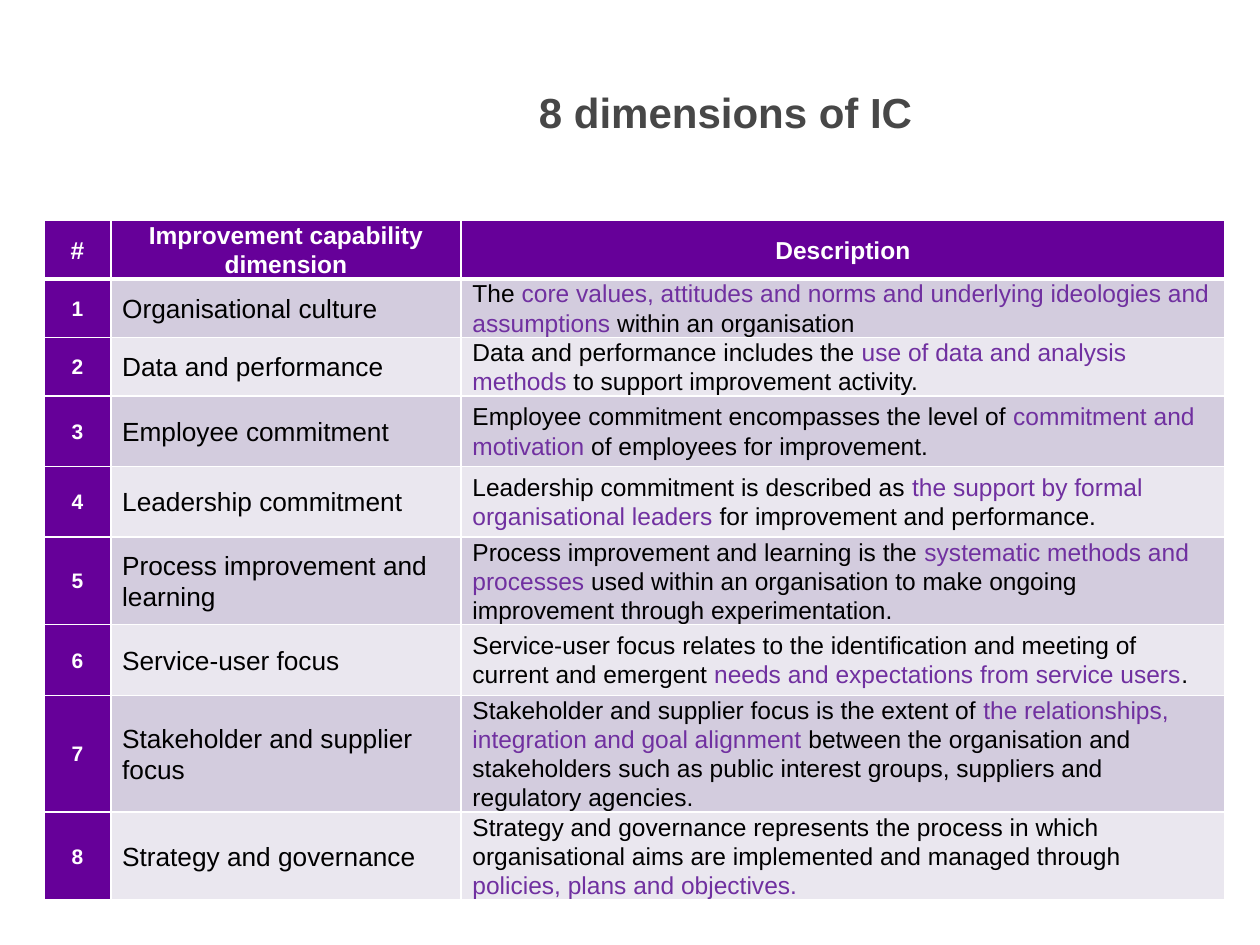
"""Build a slide with a table of the eight improvement capability dimensions."""
from dataclasses import dataclass

from lxml import etree
from pptx import Presentation
from pptx import util as u
from pptx.dml.color import RGBColor
from pptx.enum import text
from pptx.oxml.ns import qn

TITLE = "8 dimensions of IC "
HEADINGS = ["#", "Improvement capability dimension", "Description"]
DIMENSIONS = [
    ("Organisational culture",
     ["The ", "core values, attitudes and norms and underlying ideologies and assumptions",
      " within an organisation"]),
    ("Data and performance",
     ["Data and performance includes the ", "use of data and analysis methods",
      " to support improvement activity."]),
    ("Employee commitment",
     ["Employee commitment encompasses the level of ", "commitment and motivation",
      " of employees for improvement."]),
    ("Leadership commitment",
     ["Leadership commitment is described as ",
      "the support by formal organisational leaders ",
      "for improvement and performance."]),
    ("Process improvement and learning",
     ["Process improvement and learning is the", " systematic methods and processes",
      " used within an organisation to make ongoing improvement through experimentation."]),
    ("Service-user focus",
     ["Service-user focus relates to the identification and meeting of current and emergent ",
      "needs and expectations from service users", "."]),
    ("Stakeholder and supplier focus",
     ["Stakeholder and supplier focus is the extent of ",
      "the relationships, integration and goal alignment",
      " between the organisation and stakeholders such as public interest groups, "
      "suppliers and regulatory agencies."]),
    ("Strategy and governance",
     ["Strategy and governance represents the process in which organisational aims "
      "are implemented and managed through ", "policies, plans and objectives."]),
]
COLUMN_WIDTHS = [0.53, 2.78, 6.06]
ROW_HEIGHTS = [0.45, 0.46, 0.46, 0.56, 0.56, 0.67, 0.56, 0.9, 0.67]
TABLE_LEFT, TABLE_TOP = 0.35, 1.75
TITLE_BOX = (1.61, 0.45, 8.39, 0.88)


@dataclass(frozen=True)
class Theme:
    font: str = "Arial"
    title: str = "474747"
    head: str = "660099"
    light: str = "FFFFFF"
    body: str = "000000"
    accent: str = "7030A0"
    bands: tuple = ("D3CCDE", "EAE7EF")
    title_size: int = 24
    head_size: int = 14
    number_size: int = 12
    name_size: int = 15
    body_size: int = 14
    leading: float = 1.19
    rule: int = 1
    head_rule: int = 3


THEME = Theme()


def style(span, size, color, bold):
    font = span.font
    font.name, font.size, font.bold = THEME.font, u.Pt(size), bold
    font.color.rgb = RGBColor.from_string(color)


def add_borders(cell, top, bottom):
    properties = cell._tc.get_or_add_tcPr()
    sides = [("L", THEME.rule), ("R", THEME.rule), ("T", top), ("B", bottom)]
    for index, (side, width) in enumerate(sides):
        line = etree.Element(qn(f"a:ln{side}"), w=str(u.Pt(width)))
        fill = etree.SubElement(line, qn("a:solidFill"))
        etree.SubElement(fill, qn("a:srgbClr"), val=THEME.light)
        properties.insert(index, line)


def fill_cell(cell, parts, size, fill, heading):
    cell.fill.solid()
    cell.fill.fore_color.rgb = RGBColor.from_string(fill)
    cell.vertical_anchor = text.MSO_ANCHOR.MIDDLE
    cell.margin_left = cell.margin_right = u.Inches(0.09)
    cell.margin_top = cell.margin_bottom = 0
    para = cell.text_frame.paragraphs[0]
    para.line_spacing = u.Pt(round(size * THEME.leading, 1))
    para.alignment = text.PP_ALIGN.CENTER if heading else text.PP_ALIGN.LEFT
    para.space_after = u.Pt(0 if heading else 8)
    colors = [THEME.light] if heading else [THEME.body, THEME.accent, THEME.body]
    for part, color in zip(parts, colors):
        span = para.add_run()
        span.text = part
        style(span, size, color, heading)


def add_title(page):
    box = page.shapes.add_textbox(*map(u.Inches, TITLE_BOX))
    frame = box.text_frame
    frame.word_wrap = True
    frame.vertical_anchor = text.MSO_ANCHOR.MIDDLE
    frame.text = TITLE
    para = frame.paragraphs[0]
    para.alignment = text.PP_ALIGN.CENTER
    style(para.runs[0], THEME.title_size, THEME.title, True)


def add_dimensions(page):
    area = (TABLE_LEFT, TABLE_TOP, sum(COLUMN_WIDTHS), sum(ROW_HEIGHTS))
    table = page.shapes.add_table(
        len(ROW_HEIGHTS), len(COLUMN_WIDTHS), *map(u.Inches, area)).table
    for column, width in zip(table.columns, COLUMN_WIDTHS):
        column.width = u.Inches(width)
    for row, height in zip(table.rows, ROW_HEIGHTS):
        row.height = u.Inches(height)

    for column, heading in enumerate(HEADINGS):
        fill_cell(table.cell(0, column), [heading], THEME.head_size, THEME.head, True)
        add_borders(table.cell(0, column), THEME.rule, THEME.head_rule)

    for number, (name, description) in enumerate(DIMENSIONS, 1):
        band = THEME.bands[(number - 1) % 2]
        entries = [
            ([str(number)], THEME.number_size, THEME.head, True),
            ([name], THEME.name_size, band, False),
            (description, THEME.body_size, band, False),
        ]
        top = THEME.head_rule if number == 1 else THEME.rule
        for column, entry in enumerate(entries):
            fill_cell(table.cell(number, column), *entry)
            add_borders(table.cell(number, column), top, THEME.rule)


def main():
    deck = Presentation()
    deck.slide_width, deck.slide_height = u.Inches(10), u.Inches(7.5)
    page = deck.slides.add_slide(deck.slide_layouts[6])
    add_title(page)
    add_dimensions(page)
    deck.save("out.pptx")


if __name__ == "__main__":
    main()
